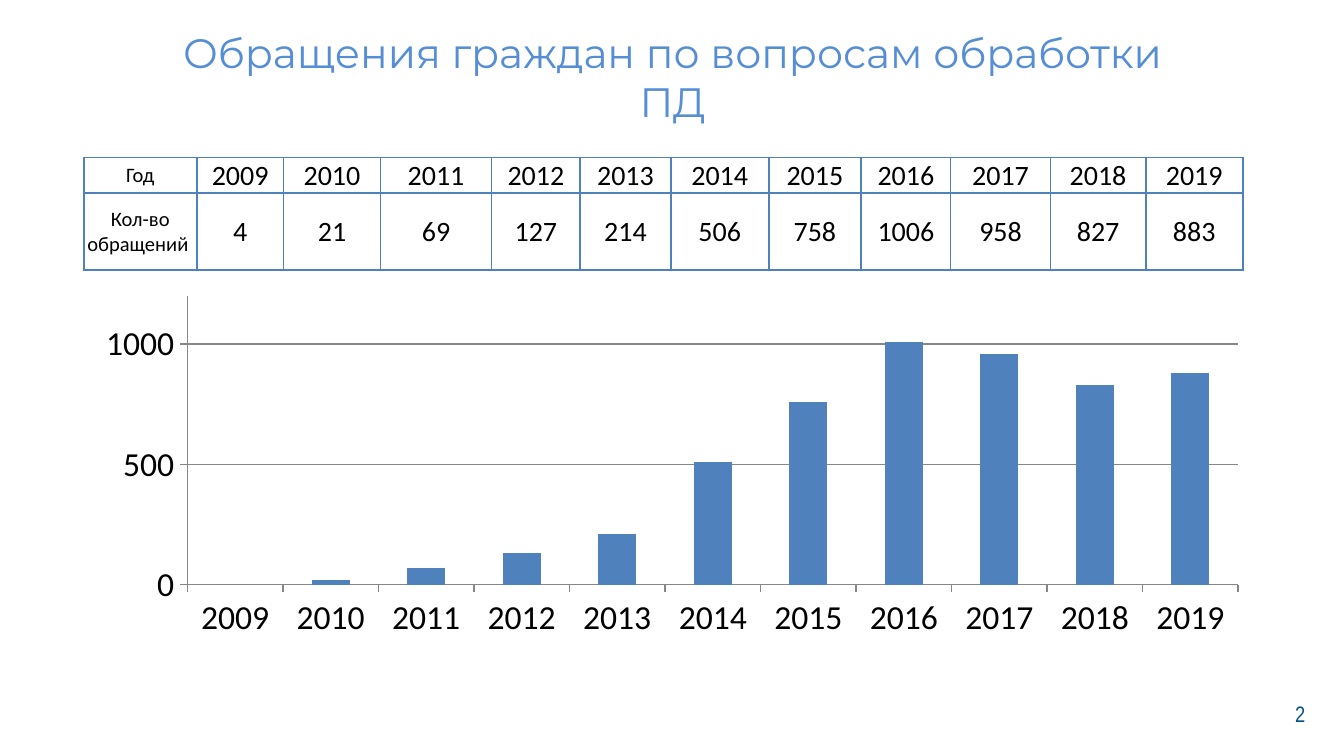
from lxml import etree
from pptx import Presentation
from pptx.chart.data import CategoryChartData
from pptx.dml.color import RGBColor
from pptx.enum import chart as ch, text as tx
from pptx.oxml import ns
from pptx.util import Pt

TITLE = "Обращения граждан по вопросам обработки ПД"
PAGE = "2"
HEADS = ["Год", "Кол-во обращений "]
YEARS = [str(year) for year in range(2009, 2020)]
COUNTS = [4, 21, 69, 127, 214, 506, 758, 1006, 958, 827, 883]
WIDTHS = [60.5, 46.5, 52, 59.5, 47.5, 48.5, 52.5, 49.5, 48, 53.5, 51, 52]
HEIGHTS = [19, 41.5]
PLOT = {"x": 0.09, "y": 0.02, "w": 0.89, "h": 0.81}
BLUE, GRAY, BLACK = "4F81BD", "878787", "000000"


def paint(hue):
    return RGBColor.from_string(hue)


def style(font, size, name, hue):
    font.size, font.name = Pt(size), name
    font.color.rgb = paint(hue)


def write(frame, words, align, *look):
    par = frame.paragraphs[0]
    par.text, par.alignment = words, align
    style(par.font, *look)


def label(spot, words, align, *look):
    """Add a wrapped text box and return its frame."""
    frame = slide.shapes.add_textbox(*map(Pt, spot)).text_frame
    frame.word_wrap = True
    write(frame, words, align, *look)
    return frame


def border(cell):
    props = cell._tc.get_or_add_tcPr()
    for at, side in enumerate(["lnL", "lnR", "lnT", "lnB"]):
        line = etree.Element(ns.qn("a:" + side), w=str(Pt(1)))
        fill = etree.SubElement(line, ns.qn("a:solidFill"))
        etree.SubElement(fill, ns.qn("a:srgbClr"), val=BLUE)
        props.insert(at, line)


def place(chart):
    """Fix the inner plot area as shares of the chart frame."""
    area = chart.element.find(".//" + ns.qn("c:plotArea"))
    for old in area.findall(ns.qn("c:layout")):
        area.remove(old)
    layout = etree.Element(ns.qn("c:layout"))
    manual = etree.SubElement(layout, ns.qn("c:manualLayout"))
    parts = {"layoutTarget": "inner", "xMode": "edge", "yMode": "edge", **PLOT}
    for tag, val in parts.items():
        etree.SubElement(manual, ns.qn("c:" + tag), val=str(val))
    area.insert(0, layout)


deck = Presentation()
deck.slide_width, deck.slide_height = Pt(720), Pt(405)
slide = deck.slides.add_slide(deck.slide_layouts[6])
MID, RIGHT = tx.PP_ALIGN.CENTER, tx.PP_ALIGN.RIGHT

# Title and page number
label((75.5, 11, 569.5, 53), TITLE, MID, 22, "Montserrat", "558ED5")
page = label((544.3, 374.5, 162, 16), PAGE, RIGHT, 12, "Arial Narrow", "04528A")
page.vertical_anchor = tx.MSO_ANCHOR.MIDDLE

# Table of counts by year
rows = [HEADS[:1] + YEARS, HEADS[1:] + COUNTS]
spot = map(Pt, (44.9, 84.3, sum(WIDTHS), sum(HEIGHTS)))
table = slide.shapes.add_table(len(rows), len(WIDTHS), *spot).table
for col, width in zip(table.columns, WIDTHS):
    col.width = Pt(width)
for r, (height, row) in enumerate(zip(HEIGHTS, rows)):
    table.rows[r].height = Pt(height)
    for c, value in enumerate(row):
        cell = table.cell(r, c)
        cell.margin_left = cell.margin_right = cell.margin_top = Pt(0.7)
        cell.margin_bottom = 0
        cell.vertical_anchor = tx.MSO_ANCHOR.MIDDLE
        cell.fill.background()
        border(cell)
        write(cell.text_frame, str(value), MID, 15 if c else 11, "Calibri", BLACK)

# Column chart of the counts, rounded to tens
data = CategoryChartData()
data.categories = YEARS
data.add_series("Обращения", [round(count, -1) for count in COUNTS])
spot = map(Pt, (43.5, 154.7, 632.5, 191))
chart = slide.shapes.add_chart(ch.XL_CHART_TYPE.COLUMN_STACKED, *spot, data).chart
chart.has_legend = chart.has_title = False
style(chart.font, 18, "Calibri", BLACK)
place(chart)
plot = chart.plots[0]
plot.vary_by_categories = False
plot.gap_width, plot.overlap = 150, 100
bars = plot.series[0].format.fill
bars.solid()
bars.fore_color.rgb = paint(BLUE)

scale = chart.value_axis
scale.minimum_scale, scale.maximum_scale, scale.major_unit = 0, 1200, 500
scale.has_major_gridlines = True
for axis in (scale, chart.category_axis):
    axis.major_tick_mark = ch.XL_TICK_MARK.OUTSIDE
    axis.minor_tick_mark = ch.XL_TICK_MARK.NONE
for part in (scale, chart.category_axis, scale.major_gridlines):
    part.format.line.color.rgb = paint(GRAY)
    part.format.line.width = Pt(0.75)

deck.save("out.pptx")
